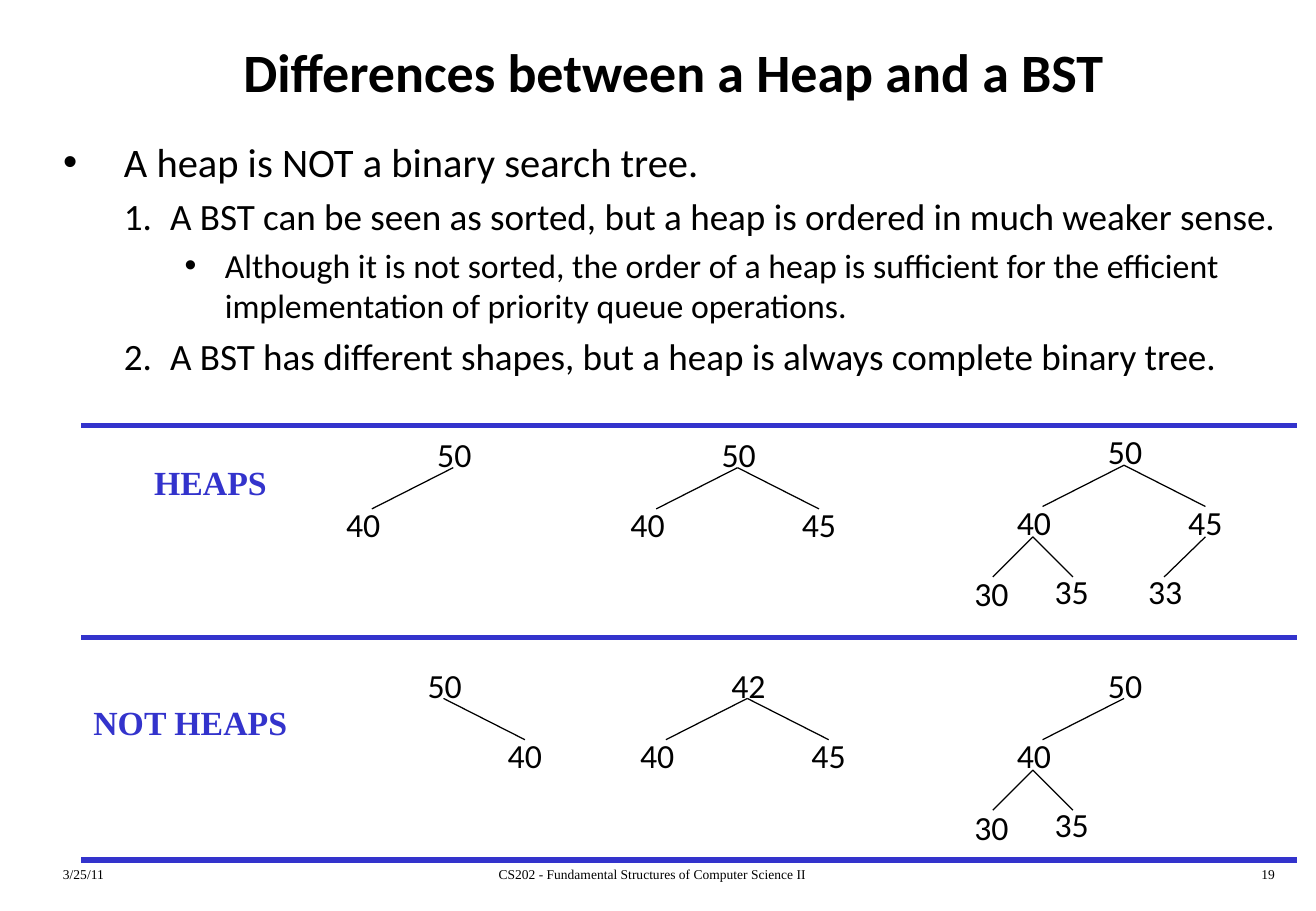
from lxml.etree import SubElement
from pptx import Presentation
from pptx.dml.color import RGBColor
from pptx.enum.shapes import MSO_CONNECTOR as Connector
from pptx.enum.text import MSO_ANCHOR as Anchor, MSO_AUTO_SIZE as AutoSize, PP_ALIGN as Align
from pptx.oxml.ns import qn
from pptx.util import Inches, Pt

BLACK = RGBColor(0x00, 0x00, 0x00)
BLUE = RGBColor(0x33, 0x33, 0xCC)
SANS, SERIF = "Calibri", "Times New Roman"

# Text, level, size, left margin, hanging indent, numbered
POINTS = [
    ("A heap is NOT a binary search tree.", 0, 24, 0.5, 0.5, False),
    ("A BST can be seen as sorted, but a heap is ordered in much weaker sense.",
     1, 22, 0.88, 0.38, True),
    ("Although it is not sorted, the order of a heap is sufficient for the "
     "efficient implementation of priority queue operations.", 2, 20, 1.33, 0.33, False),
    ("A BST has different shapes, but a heap is always complete binary tree.",
     1, 22, 0.88, 0.38, True),
]

# Offsets from the root's edge point (x) and label top (y), by route from the root
LABEL_OFFSETS = {
    "": (-0.23, 0), "L": (-0.98, 0.58), "R": (0.43, 0.58),
    "LL": (-1.33, 1.17), "LR": (-0.67, 1.15), "RL": (0.1, 1.15),
}
EDGE_OFFSETS = {
    "L": (0, 0.33, -0.67, 0.67), "R": (0, 0.33, 0.67, 0.67),
    "LL": (-0.75, 0.92, -1.08, 1.25), "LR": (-0.75, 0.92, -0.42, 1.25),
    "RL": (0.67, 0.92, 0.33, 1.25),
}

# Root position and node values by route
TREES = [
    (3.73, 3.52, {"": 50, "L": 40}),
    (6.07, 3.52, {"": 50, "L": 40, "R": 45}),
    (9.25, 3.5, {"": 50, "L": 40, "R": 45, "LL": 30, "LR": 35, "RL": 33}),
    (3.65, 5.42, {"": 50, "R": 40}),
    (6.15, 5.42, {"": 42, "L": 40, "R": 45}),
    (9.25, 5.42, {"": 50, "L": 40, "LL": 30, "LR": 35}),
]


def place(shape, left, top, width, height):
    shape.left, shape.top = Inches(left), Inches(top)
    shape.width, shape.height = Inches(width), Inches(height)


def write(para, text, *, size, font=SANS, color=BLACK, bold=False, align=Align.LEFT):
    para.alignment = align
    span = para.add_run()
    span.text = text
    span.font.name, span.font.size, span.font.bold = font, Pt(size), bold
    span.font.color.rgb = color


def add_label(page, text, left, top, width, height=0.44, **style):
    box = page.shapes.add_textbox(Inches(left), Inches(top), Inches(width), Inches(height))
    box.text_frame.word_wrap = True
    write(box.text_frame.paragraphs[0], text, **style)


def add_line(page, x1, y1, x2, y2, color=BLACK, weight=0.75):
    line = page.shapes.add_connector(
        Connector.STRAIGHT, Inches(x1), Inches(y1), Inches(x2), Inches(y2))
    line.line.color.rgb = color
    line.line.width = Pt(weight)
    SubElement(line._element.spPr, qn("a:effectLst"))


def add_title(page, text):
    title = page.shapes.title
    place(title, 0.42, 0.17, 10.25, 0.83)
    title.text_frame.auto_size = AutoSize.NONE
    title.text_frame.vertical_anchor = Anchor.MIDDLE
    write(title.text_frame.paragraphs[0], text, size=32, bold=True, align=Align.CENTER)


def set_bullet(para, margin, hanging, numbered):
    props = para._p.get_or_add_pPr()
    props.set("marL", str(Inches(margin)))
    props.set("indent", str(-Inches(hanging)))
    if numbered:
        SubElement(props, qn("a:buAutoNum"), type="arabicPeriod")
    else:
        SubElement(props, qn("a:buChar"), char="•")


def add_points(page):
    body = page.placeholders[1]
    place(body, 0.42, 1.08, 10.42, 5.83)
    frame = body.text_frame
    frame.auto_size = AutoSize.NONE
    for number, (text, level, size, margin, hanging, numbered) in enumerate(POINTS):
        para = frame.add_paragraph() if number else frame.paragraphs[0]
        para.level = level
        write(para, text, size=size)
        set_bullet(para, margin, hanging, numbered)


def add_tree(page, x, y, nodes):
    for route, value in nodes.items():
        dx, dy = LABEL_OFFSETS[route]
        add_label(page, str(value), x + dx, y + dy, 0.5, size=20)
        if route:
            x1, y1, x2, y2 = EDGE_OFFSETS[route]
            add_line(page, x + x1, y + y1, x + x2, y + y2)


def main():
    deck = Presentation()
    deck.slide_width, deck.slide_height = Inches(10.83), Inches(7.5)
    page = deck.slides.add_slide(deck.slide_layouts[1])

    # Title and list
    add_title(page, "Differences between a Heap and a BST")
    add_points(page)

    # Footer
    for text, left, width, align in [
        ("3/25/11", 0.42, 2.26, Align.LEFT),
        ("CS202 - Fundamental Structures of Computer Science II", 3.34, 4.06, Align.CENTER),
        ("19", 8.33, 2.26, Align.RIGHT),
    ]:
        add_label(page, text, left, 7.08, width, 0.25, size=8, font=SERIF, align=align)

    # Row labels and trees
    for text, left, top, width in [("HEAPS", 1.17, 3.75, 1.16),
                                   ("NOT HEAPS", 0.67, 5.73, 1.83)]:
        add_label(page, text, left, top, width, size=20, font=SERIF, color=BLUE, bold=True)
    for x, y, nodes in TREES:
        add_tree(page, x, y, nodes)

    # Row rules
    for y in (3.5, 5.25, 7.08):
        add_line(page, 0.67, y, 10.67, y, color=BLUE, weight=3)

    deck.save("out.pptx")


if __name__ == "__main__":
    main()
